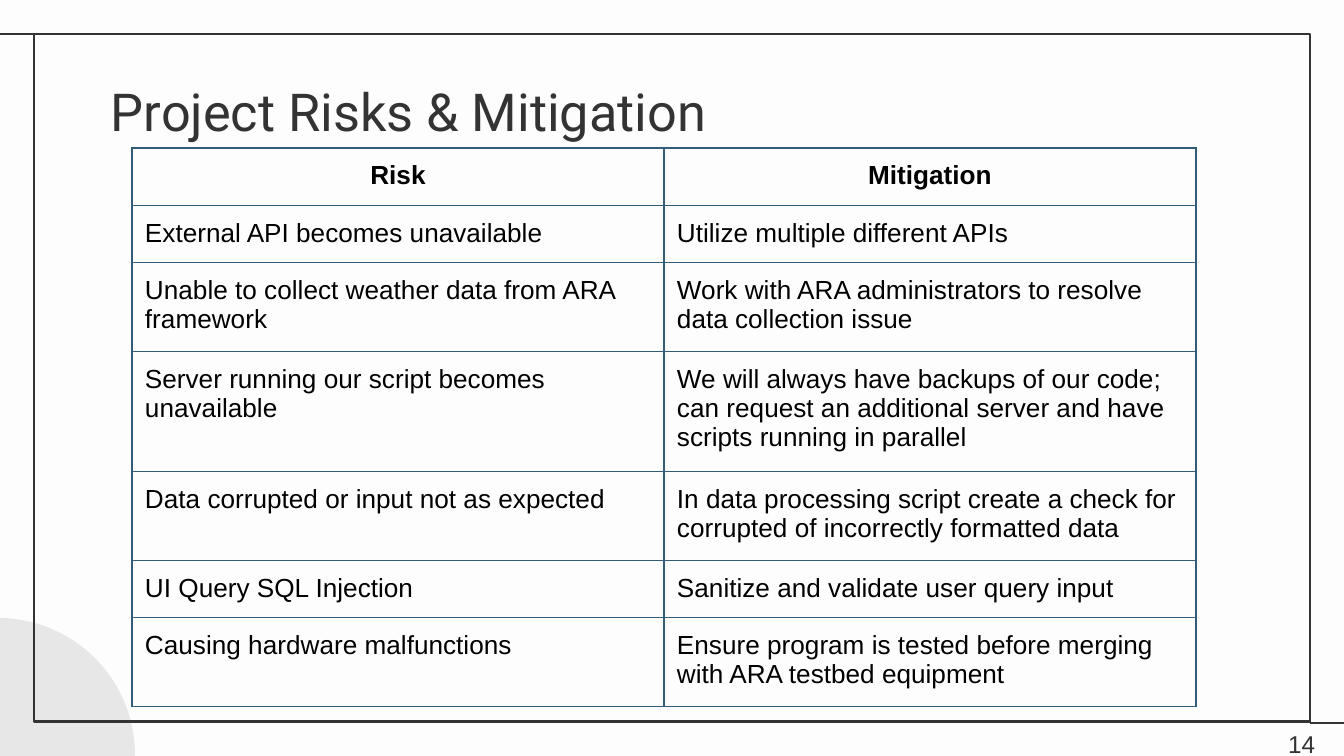
from typing import NamedTuple

from lxml.etree import SubElement
from pptx import Presentation
from pptx.dml.color import RGBColor
from pptx.enum.shapes import MSO_CONNECTOR as Connector, MSO_SHAPE as Shape
from pptx.enum.text import MSO_ANCHOR as Anchor, PP_ALIGN as Align
from pptx.oxml.ns import qn
from pptx.util import Pt

PX = 914400 / 134.4
INK = RGBColor(0x33, 0x33, 0x33)
BLACK = RGBColor(0, 0, 0)
PAPER = RGBColor(0xFD, 0xFD, 0xFD)
DISC_GREY = RGBColor(0xE8, 0xE7, 0xE7)
TABLE_BLUE = RGBColor(0x32, 0x5D, 0x79)
INSET = 13
COLUMN_WIDTH, ROW_HEIGHT = 532, 56


class Box(NamedTuple):
    left: int
    top: int
    width: int
    height: int


class Rule(NamedTuple):
    start: int
    end: int
    y: int


class Label(NamedTuple):
    text: str
    box: Box
    font: str
    size: int
    align: Align
    anchor: Anchor


class RiskRow(NamedTuple):
    risk: str
    mitigation: str


RULES = [Rule(35, -3, 34), Rule(1348, 1310, 723)]
LABELS = [
    Label("Project Risks & Mitigation", Box(98, 66, 1133, 85), "Roboto", 28, Align.LEFT, Anchor.TOP),
    Label("14", Box(1247, 715, 81, 58), "Arial", 13, Align.RIGHT, Anchor.MIDDLE),
]
ROWS = [
    RiskRow("Risk", "Mitigation"),
    RiskRow("External API becomes unavailable", "Utilize multiple different APIs"),
    RiskRow("Unable to collect weather data from ARA framework",
            "Work with ARA administrators to resolve data collection issue"),
    RiskRow("Server running our script becomes unavailable",
            "We will always have backups of our code; can request an additional "
            "server and have scripts running in parallel"),
    RiskRow("Data corrupted or input not as expected",
            "In data processing script create a check for corrupted of incorrectly formatted data"),
    RiskRow("UI Query SQL Injection", "Sanitize and validate user query input"),
    RiskRow("Causing hardware malfunctions",
            "Ensure program is tested before merging with ARA testbed equipment"),
]


def px(length: int) -> int:
    return round(length * PX)


def place(box: Box) -> list[int]:
    return [px(length) for length in box]


def set_margins(target) -> None:
    target.margin_left = target.margin_right = px(INSET)
    target.margin_top = target.margin_bottom = px(INSET)


def style_paragraph(paragraph, font: str, size: int, color: RGBColor, align: Align, bold: bool = False) -> None:
    paragraph.alignment = align
    paragraph.font.name = font
    paragraph.font.size = Pt(size)
    paragraph.font.bold = bold
    paragraph.font.color.rgb = color


def draw_disc(slide, box: Box) -> None:
    disc = slide.shapes.add_shape(Shape.OVAL, *place(box))
    disc.shadow.inherit = False
    disc.fill.solid()
    disc.fill.fore_color.rgb = DISC_GREY
    disc.line.fill.background()


def draw_frame(slide, box: Box) -> None:
    frame = slide.shapes.add_shape(Shape.RECTANGLE, *place(box))
    frame.shadow.inherit = False
    frame.fill.background()
    frame.line.color.rgb = INK
    frame.line.width = Pt(1.5)


def draw_rule(slide, rule: Rule) -> None:
    line = slide.shapes.add_connector(
        Connector.STRAIGHT, px(rule.start), px(rule.y), px(rule.end), px(rule.y))
    line.line.color.rgb = INK
    line.line.width = Pt(1.5)
    SubElement(line._element.spPr, qn("a:effectLst"))


def draw_label(slide, label: Label) -> None:
    frame = slide.shapes.add_textbox(*place(label.box)).text_frame
    frame.word_wrap = True
    frame.vertical_anchor = label.anchor
    set_margins(frame)
    paragraph = frame.paragraphs[0]
    paragraph.text = label.text
    style_paragraph(paragraph, label.font, label.size, INK, label.align)


def add_borders(cell) -> None:
    properties = cell._tc.get_or_add_tcPr()
    for index, side in enumerate(("a:lnL", "a:lnR", "a:lnT", "a:lnB")):
        border = properties.makeelement(qn(side), {"w": str(Pt(0.75))})
        fill = SubElement(border, qn("a:solidFill"))
        SubElement(fill, qn("a:srgbClr"), val=str(TABLE_BLUE))
        properties.insert(index, border)


def draw_table(slide, left: int, top: int, rows: list[RiskRow]) -> None:
    columns = len(RiskRow._fields)
    box = Box(left, top, columns * COLUMN_WIDTH, len(rows) * ROW_HEIGHT)
    table = slide.shapes.add_table(len(rows), columns, *place(box)).table
    table.first_row = table.horz_banding = False
    for row_index, row in enumerate(rows):
        is_header = row_index == 0
        for column_index, text in enumerate(row):
            cell = table.cell(row_index, column_index)
            cell.text = text
            cell.fill.background()
            set_margins(cell)
            add_borders(cell)
            style_paragraph(cell.text_frame.paragraphs[0], "Arial", 14, BLACK,
                            Align.CENTER if is_header else Align.LEFT, is_header)


def main() -> None:
    presentation = Presentation()
    presentation.slide_width = px(1344)
    presentation.slide_height = px(756)
    slide = presentation.slides.add_slide(presentation.slide_layouts[6])
    slide.background.fill.solid()
    slide.background.fill.fore_color.rgb = PAPER
    draw_disc(slide, Box(-139, 618, 274, 274))
    draw_frame(slide, Box(34, 34, 1276, 688))
    for rule in RULES:
        draw_rule(slide, rule)
    for label in LABELS:
        draw_label(slide, label)
    draw_table(slide, 132, 148, ROWS)
    presentation.save("out.pptx")


if __name__ == "__main__":
    main()
